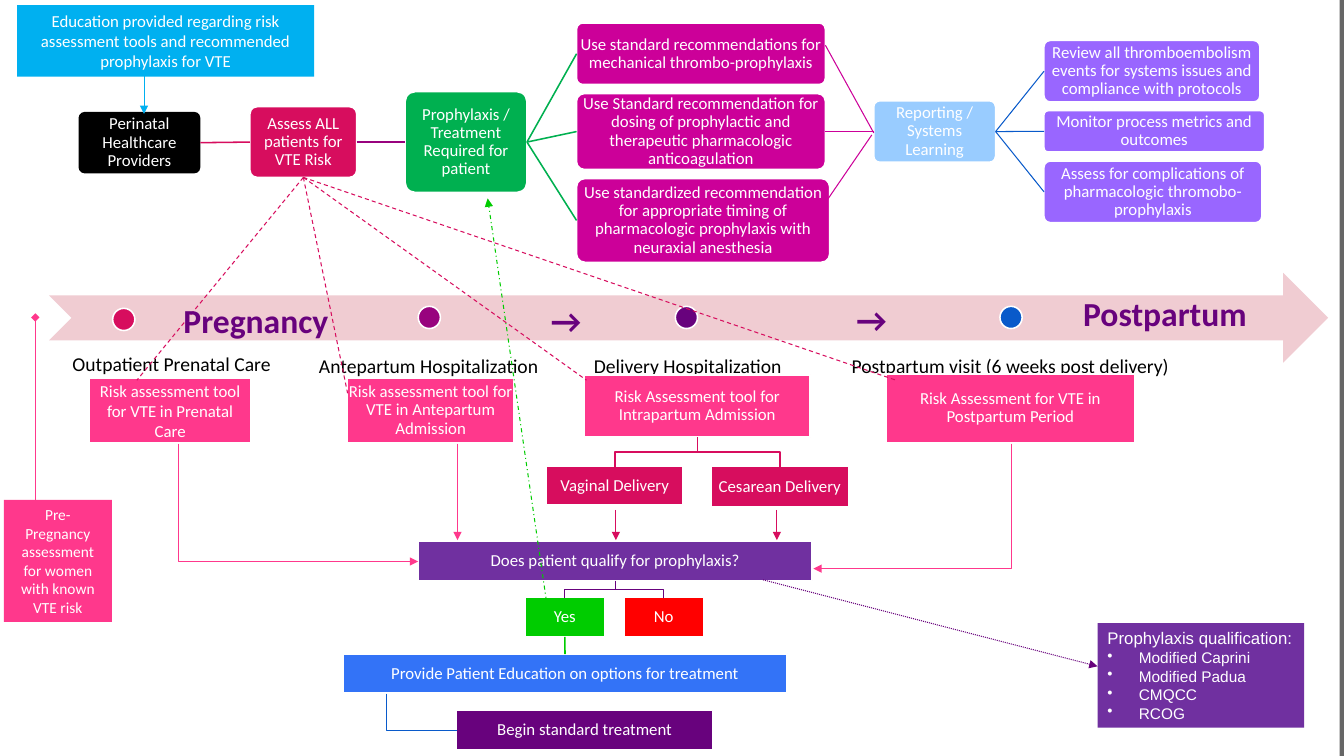
from dataclasses import dataclass

from lxml.etree import SubElement
from pptx import Presentation
from pptx.dml.color import RGBColor
from pptx.enum.dml import MSO_LINE
from pptx.enum.shapes import MSO_CONNECTOR, MSO_SHAPE
from pptx.enum.text import MSO_ANCHOR, PP_ALIGN
from pptx.oxml.ns import qn
from pptx.util import Cm, Pt


@dataclass(frozen=True)
class Theme:
    white: str = "FFFFFF"
    black: str = "000000"
    edge: str = "666666"
    band: str = "F0CCD2"
    pink: str = "FF388C"
    crimson: str = "D70D5E"
    plum: str = "98037E"
    purple: str = "68027D"
    violet: str = "7030A0"
    lilac: str = "9966FF"
    magenta: str = "CC0099"
    cyan: str = "00B0F0"
    sky: str = "99CCFF"
    blue: str = "095ACA"
    bright_blue: str = "3373F7"
    green: str = "00B050"
    lime: str = "00CC00"
    red: str = "FF0000"
    font: str = "Calibri"
    list_font: str = "Arial"
    small: float = 11
    body: float = 12
    stage: float = 14
    title: float = 24
    thin: float = 0.75
    line: float = 1.1


T = Theme()
TOP, LEFT, BOTTOM, RIGHT = range(4)
RECT, ROUND = MSO_SHAPE.RECTANGLE, MSO_SHAPE.ROUNDED_RECTANGLE

# name: (shape, fill, left, top, width, height, text)
BOXES = {
    "delivery": (RECT, T.pink, 14.73, 9.45, 5.69, 1.57, "Risk Assessment tool for Intrapartum Admission"),
    "vaginal": (RECT, T.crimson, 13.77, 11.76, 3.45, 0.97, "Vaginal Delivery"),
    "cesarean": (RECT, T.crimson, 17.93, 11.76, 3.45, 1.02, "Cesarean Delivery"),
    "postpartum": (RECT, T.pink, 22.33, 9.42, 6.27, 1.73, "Risk Assessment for VTE in Postpartum Period"),
    "antepartum": (RECT, T.pink, 8.76, 9.53, 4.19, 1.63, "Risk assessment tool for VTE in Antepartum Admission"),
    "qualify": (RECT, T.violet, 10.54, 13.64, 9.93, 0.99, "Does patient qualify for prophylaxis?"),
    "yes": (RECT, T.lime, 13.23, 15.06, 2.01, 0.99, "Yes"),
    "no": (RECT, T.red, 15.72, 15.06, 2.01, 0.99, "No"),
    "education": (RECT, T.bright_blue, 8.64, 16.48, 11.2, 0.99, "Provide Patient Education on options for treatment"),
    "begin": (RECT, T.purple, 11.51, 17.91, 6.45, 0.99, "Begin standard treatment"),
    "providers": (ROUND, T.black, 1.98, 2.82, 3.07, 1.55, "Perinatal Healthcare Providers"),
    "assess": (ROUND, T.crimson, 6.3, 2.69, 2.69, 1.78, "Assess ALL patients for VTE Risk"),
    "treatment": (ROUND, T.green, 10.21, 2.31, 3.07, 2.54, "Prophylaxis / Treatment Required for patient"),
    "mechanical": (ROUND, T.magenta, 14.53, 0.58, 6.27, 1.55,
                   "Use standard recommendations for mechanical thrombo-prophylaxis"),
    "dosing": (ROUND, T.magenta, 14.53, 2.36, 6.27, 1.91,
               "Use Standard recommendation for dosing of prophylactic and therapeutic pharmacologic anticoagulation"),
    "timing": (ROUND, T.magenta, 14.53, 4.5, 6.38, 2.11, "Use standardized recommendation for appropriate "
               "timing of pharmacologic prophylaxis with neuraxial anesthesia"),
    "reporting": (ROUND, T.sky, 22.02, 2.54, 3.07, 1.55, "Reporting / Systems Learning"),
    "review": (ROUND, T.lilac, 26.31, 1.02, 5.44, 1.55,
               "Review all thromboembolism events for systems issues and compliance with protocols"),
    "monitor": (ROUND, T.lilac, 26.31, 2.79, 5.56, 1.04, "Monitor process metrics and outcomes"),
    "complications": (ROUND, T.lilac, 26.31, 4.06, 5.49, 1.55,
                      "Assess for complications of pharmacologic thromobo-prophylaxis"),
}
# (from, side, to, side, colour, width)
LINKS = [
    ("providers", RIGHT, "assess", LEFT, T.crimson, T.line),
    ("assess", RIGHT, "treatment", LEFT, T.plum, T.line),
    *[("treatment", RIGHT, name, LEFT, T.green, T.line) for name in ("mechanical", "dosing", "timing")],
    ("dosing", RIGHT, "reporting", LEFT, T.magenta, T.thin),
    *[("reporting", RIGHT, name, LEFT, T.blue, T.thin) for name in ("review", "monitor", "complications")],
    ("yes", BOTTOM, "education", TOP, T.lime, T.line),
]
# (start, end, colour, format)
LINES = [
    ((20.8, 1.14), (22.02, 3.35), T.magenta, {}),
    ((20.47, 5.59), (21.97, 3.4), T.magenta, {}),
    ((0.89, 12.85), (0.89, 8), T.pink, {"head": "diamond"}),
    ((3.63, 1.9), (3.63, 2.87), T.cyan, {"head": "triangle"}),
    ((11.53, 11.18), (11.53, 13.61), T.pink, {"head": "triangle"}),
    ((15.52, 12.85), (15.52, 13.61), T.crimson, {"head": "triangle"}),
    ((19.58, 12.85), (19.58, 13.61), T.crimson, {"head": "triangle"}),
    ((13.77, 15.14), (12.29, 5), T.lime, {"head": "triangle", "dash": MSO_LINE.DASH_DOT}),
    ((19.23, 14.61), (27.66, 16.79), T.purple, {"head": "triangle", "dash": MSO_LINE.ROUND_DOT}),
    ((4.5, 11.18), (10.54, 14.15), T.pink, {"head": "triangle", "elbow": True}),
    ((25.5, 11.18), (20.5, 14.33), T.pink, {"head": "triangle", "elbow": True}),
    ((9.75, 17.48), (11.51, 18.41), T.blue, {"elbow": True}),
]
TOOL_ENDS = [(3.45, 9.58), (8.76, 9.91), (14.78, 9.58), (22.58, 9.58)]
DOTS = [(2.84, 7.77, T.crimson), (10.54, 7.72, T.plum), (17.02, 7.72, T.purple), (25.2, 7.72, T.blue)]
STAGES = [(1.24, 8.56, 6.17, "Outpatient Prenatal Care"), (7.72, 8.61, 6.17, "Antepartum Hospitalization"),
          (14.25, 8.61, 6.17, "Delivery Hospitalization"),
          (20.7, 8.61, 9.53, "Postpartum visit (6 weeks post delivery)")]
TITLES = [(3.91, 7.42, 5.08, "Pregnancy"), (26.87, 7.26, 4.98, "Postpartum"),
          (12.92, 7.42, 2.69, "→"), (20.62, 7.39, 2.69, "→")]
CRITERIA = ["Modified Caprini", "Modified Padua", "CMQCC", "RCOG"]


def apply(obj, **values):
    for name, value in values.items():
        setattr(obj, name, value)


def paint_line(line, colour, width):
    line.color.rgb = RGBColor.from_string(colour)
    line.width = Pt(width)


def add_panel(s, kind, fill, x, y, w, h, outline=True):
    sp = s.shapes.add_shape(kind, Cm(x), Cm(y), Cm(w), Cm(h))
    sp.shadow.inherit = False
    sp.fill.solid()
    sp.fill.fore_color.rgb = RGBColor.from_string(fill)
    if outline:
        paint_line(sp.line, T.white, T.line)
    else:
        sp.line.fill.background()
    if kind == ROUND:
        sp.adjustments[0] = 0.1
    return sp


def write(p, text, size=T.body, colour=T.white, font=T.font, bold=False, **layout):
    apply(p, **layout)
    r = p.add_run()
    r.text = text
    apply(r.font, name=font, size=Pt(size), bold=bold)
    r.font.color.rgb = RGBColor.from_string(colour)


def set_frame(sp, anchor, side=0.25, edge=0.13):
    tf = sp.text_frame
    apply(tf, word_wrap=True, vertical_anchor=anchor, margin_left=Cm(side), margin_right=Cm(side),
          margin_top=Cm(edge), margin_bottom=Cm(edge))
    return tf


def add_box(s, kind, fill, x, y, w, h, text, spacing=0.9):
    sp = add_panel(s, kind, fill, x, y, w, h, fill != T.black)
    tf = set_frame(sp, MSO_ANCHOR.MIDDLE, 0.03, 0.03)
    write(tf.paragraphs[0], text, alignment=PP_ALIGN.CENTER, line_spacing=spacing)
    return sp


def add_note(s, fill, x, y, w, h, text, size):
    sp = add_panel(s, RECT, fill, x, y, w, h, False)
    write(set_frame(sp, MSO_ANCHOR.TOP).paragraphs[0], text, size, alignment=PP_ALIGN.CENTER)


def add_label(s, x, y, w, h, text, size, colour, bold, anchor):
    sp = s.shapes.add_textbox(Cm(x), Cm(y), Cm(w), Cm(h))
    write(set_frame(sp, anchor).paragraphs[0], text, size, colour, bold=bold, alignment=PP_ALIGN.CENTER)


def add_criteria(s):
    sp = add_panel(s, RECT, T.violet, 27.66, 15.7, 5.21, 2.64, False)
    tf = set_frame(sp, MSO_ANCHOR.TOP)
    write(tf.paragraphs[0], "Prophylaxis qualification:", font=T.list_font, alignment=PP_ALIGN.LEFT)
    for name in CRITERIA:
        p = tf.add_paragraph()
        pPr = p._p.get_or_add_pPr()
        pPr.set("marL", str(Cm(0.79)))
        pPr.set("indent", str(-Cm(0.79)))
        SubElement(pPr, qn("a:buChar")).set("char", "•")
        write(p, name, T.small, font=T.list_font, alignment=PP_ALIGN.LEFT)


def add_line(s, start, end, colour, width=T.thin, head=None, dash=None, elbow=False):
    """Draw a connector; an elbow runs down first, then sideways."""
    kind = MSO_CONNECTOR.ELBOW if elbow else MSO_CONNECTOR.STRAIGHT
    c = s.shapes.add_connector(kind, *map(Cm, start + end))
    paint_line(c.line, colour, width)
    if dash:
        c.line.dash_style = dash
    spPr = c._element.spPr
    if head:
        SubElement(c.line._get_or_add_ln(), qn("a:tailEnd")).set("type", head)
    if elbow:
        guide = SubElement(spPr.find(qn("a:prstGeom")).find(qn("a:avLst")), qn("a:gd"))
        guide.set("name", "adj1")
        guide.set("fmla", "val 0")
    SubElement(spPr, qn("a:effectLst"))
    return c


def add_fork(s, parent, children, colour, width):
    """Branch from the bottom of one box to the tops of two."""
    stem, bottom = parent.left + parent.width // 2, parent.top + parent.height
    top = children[0].top
    middle = (bottom + top) // 2
    left, right = [child.left + child.width // 2 for child in children]
    fb = s.shapes.build_freeform(left, top)
    fb.add_line_segments([(left, middle), (right, middle), (right, top)], close=False)
    fb.move_to(stem, bottom)
    fb.add_line_segments([(stem, middle)], close=False)
    sp = fb.convert_to_shape()
    sp.shadow.inherit = False
    sp.fill.background()
    paint_line(sp.line, colour, width)


def main():
    prs = Presentation()
    apply(prs, slide_width=Cm(33.87), slide_height=Cm(19.05))
    s = prs.slides.add_slide(prs.slide_layouts[6])
    add_panel(s, RECT, T.edge, 33.76, 0, 0.11, 19.05, False)
    add_panel(s, MSO_SHAPE.NOTCHED_RIGHT_ARROW, T.band, 1.24, 6.88, 32.23, 2.26, False)
    for x, y, colour in DOTS:
        add_panel(s, MSO_SHAPE.OVAL, colour, x, y, 0.56, 0.56)
    for x, y, w, text in STAGES:
        add_label(s, x, y, w, 1.04, text, T.stage, T.black, False, MSO_ANCHOR.BOTTOM)
    boxes = {name: add_box(s, *box) for name, box in BOXES.items()}
    add_box(s, RECT, T.pink, 2.26, 9.53, 4.06, 1.63, "Risk assessment tool for VTE in Prenatal Care", 1.0)
    add_note(s, T.pink, 0.1, 12.6, 2.72, 3.07, "Pre-Pregnancy assessment for women with known VTE risk", T.small)
    add_note(s, T.cyan, 0.43, 0.13, 7.49, 1.8, "Education provided regarding risk assessment tools "
             "and recommended prophylaxis for VTE", T.body)
    add_criteria(s)
    add_fork(s, boxes["delivery"], [boxes["vaginal"], boxes["cesarean"]], T.crimson, T.line)
    add_fork(s, boxes["qualify"], [boxes["yes"], boxes["no"]], T.purple, T.thin)
    for source, out, target, into, colour, width in LINKS:
        c = add_line(s, (0, 0), (0, 0), colour, width)
        c.begin_connect(boxes[source], out)
        c.end_connect(boxes[target], into)
    for end in TOOL_ENDS:
        c = add_line(s, (7.65, 4.47), end, T.crimson, dash=MSO_LINE.DASH)
        c.begin_connect(boxes["assess"], BOTTOM)
    for start, end, colour, style in LINES:
        add_line(s, start, end, colour, **style)
    for x, y, w, text in TITLES:
        add_label(s, x, y, w, 1.27, text, T.title, T.purple, True, MSO_ANCHOR.TOP)
    prs.save("out.pptx")


if __name__ == "__main__":
    main()
